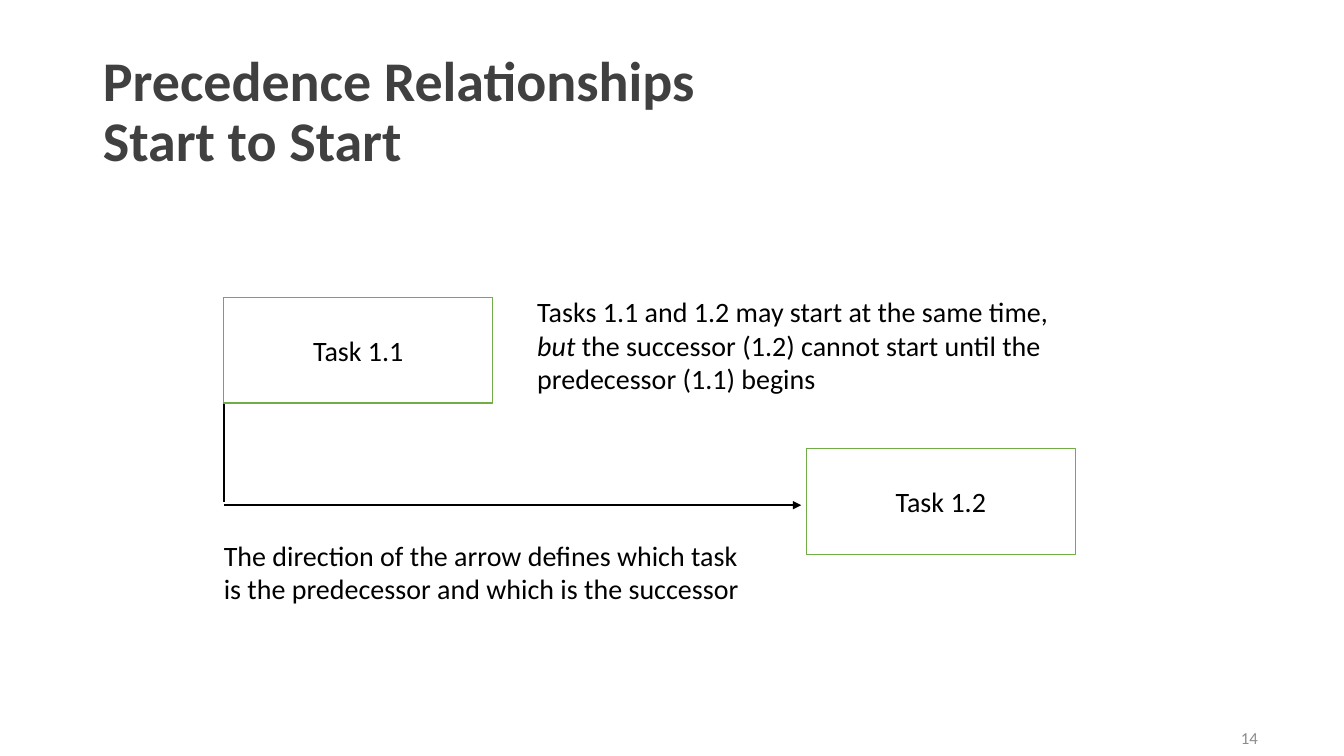
from dataclasses import dataclass

from lxml.etree import SubElement
from pptx import Presentation
from pptx.dml.color import RGBColor
from pptx.enum.shapes import MSO_CONNECTOR, MSO_SHAPE
from pptx.enum.text import MSO_ANCHOR as Anchor, MSO_AUTO_SIZE as AutoSize, PP_ALIGN as Align
from pptx.oxml.ns import qn
from pptx.util import Cm, Pt

BLACK = RGBColor(0x00, 0x00, 0x00)
WHITE = RGBColor(0xFF, 0xFF, 0xFF)
GREEN = RGBColor(0x70, 0xAD, 0x47)
TITLE_GREY = RGBColor(0x40, 0x40, 0x41)
NUMBER_GREY = RGBColor(0x8C, 0x8C, 0x8C)

TASK_WIDTH, TASK_HEIGHT = 6.78, 2.67
START_X = 5.64
TASK_1_Y = 7.49
ARROW_Y = 12.73
NO_INSETS = dict.fromkeys(("margin_left", "margin_top", "margin_right", "margin_bottom"), 0)


@dataclass(frozen=True)
class Task:
    label: str
    left: float
    top: float


@dataclass(frozen=True)
class Caption:
    """Text as (wording, italic) runs in a box measured in centimetres."""
    runs: tuple[tuple[str, bool], ...]
    box: tuple[float, float, float, float]
    size: int = 20
    color: RGBColor = BLACK
    align: Align = Align.LEFT
    anchor: Anchor = Anchor.TOP
    inset: bool = False


@dataclass(frozen=True)
class Link:
    begin: tuple[float, float]
    end: tuple[float, float]
    arrow: bool = False


TASKS = (
    Task("Task 1.2", 20.32, 11.3),
    Task("Task 1.1", START_X, TASK_1_Y),
)
LINKS = (
    Link((START_X, TASK_1_Y + TASK_HEIGHT), (START_X, 12.65)),
    Link((START_X, ARROW_Y), (20.19, ARROW_Y), arrow=True),
)
CAPTIONS = (
    Caption((("The direction of the arrow defines which task is the predecessor "
              "and which is the successor", False),), (START_X, 13.56, 13.21, 2.77)),
    Caption((("Tasks 1.1 and 1.2 may start at the same time, ", False),
             ("but", True),
             (" the successor (1.2) cannot start until the predecessor (1.1) begins", False)),
            (13.54, 7.42, 13.56, 2.29)),
    Caption((("14", False),), (24.33, 18.08, 7.62, 1.02), size=12, color=NUMBER_GREY,
            align=Align.RIGHT, anchor=Anchor.MIDDLE, inset=True),
)


def set_all(target: object, values: dict) -> None:
    for name, value in values.items():
        setattr(target, name, value)


def style_font(font, size: int, color: RGBColor, **extra: bool) -> None:
    set_all(font, {"name": "Calibri", "size": Pt(size), **extra})
    font.color.rgb = color


def add_title(slide) -> None:
    title = slide.shapes.title
    set_all(title, {"left": Cm(2.34), "top": Cm(1.02), "width": Cm(29.21), "height": Cm(3.68)})
    set_all(title.text_frame, {"vertical_anchor": Anchor.MIDDLE, "word_wrap": True,
                               "auto_size": AutoSize.NONE})
    heading = title.text_frame.paragraphs[0]
    set_all(heading, {"alignment": Align.LEFT, "line_spacing": 0.9})
    heading.add_run().text = "Precedence Relationships"
    heading.add_line_break()
    heading.add_run().text = "Start to Start"
    for run in heading.runs:
        style_font(run.font, 40, TITLE_GREY, bold=True)


def add_link(slide, link: Link) -> None:
    connector = slide.shapes.add_connector(
        MSO_CONNECTOR.STRAIGHT, *map(Cm, link.begin + link.end))
    connector.line.width = Pt(1.5)
    connector.line.color.rgb = BLACK
    if link.arrow:
        SubElement(connector.line._get_or_add_ln(), qn("a:tailEnd"), type="triangle")
    SubElement(connector._element.spPr, qn("a:effectLst"))


def add_caption(slide, caption: Caption) -> None:
    frame = slide.shapes.add_textbox(*map(Cm, caption.box)).text_frame
    set_all(frame, {"word_wrap": True, "vertical_anchor": caption.anchor,
                    **({} if caption.inset else NO_INSETS)})
    paragraph = frame.paragraphs[0]
    paragraph.alignment = caption.align
    for wording, italic in caption.runs:
        run = paragraph.add_run()
        run.text = wording
        style_font(run.font, caption.size, caption.color, italic=italic)


def add_task(slide, task: Task) -> None:
    box = slide.shapes.add_shape(
        MSO_SHAPE.RECTANGLE, *map(Cm, (task.left, task.top, TASK_WIDTH, TASK_HEIGHT)))
    box.shadow.inherit = False
    box.fill.solid()
    box.fill.fore_color.rgb = WHITE
    box.line.color.rgb = GREEN
    box.line.width = Pt(1)
    set_all(box.text_frame, {"vertical_anchor": Anchor.MIDDLE, "word_wrap": True, **NO_INSETS})
    label = box.text_frame.paragraphs[0]
    label.alignment = Align.CENTER
    label.text = task.label
    style_font(label.runs[0].font, 20, BLACK)


def main() -> None:
    deck = Presentation()
    set_all(deck, {"slide_width": Cm(33.87), "slide_height": Cm(19.05)})
    slide = deck.slides.add_slide(deck.slide_layouts.get_by_name("Title Only"))
    add_title(slide)
    for link in LINKS:
        add_link(slide, link)
    for caption in CAPTIONS:
        add_caption(slide, caption)
    for task in TASKS:
        add_task(slide, task)
    deck.save("out.pptx")


if __name__ == "__main__":
    main()
